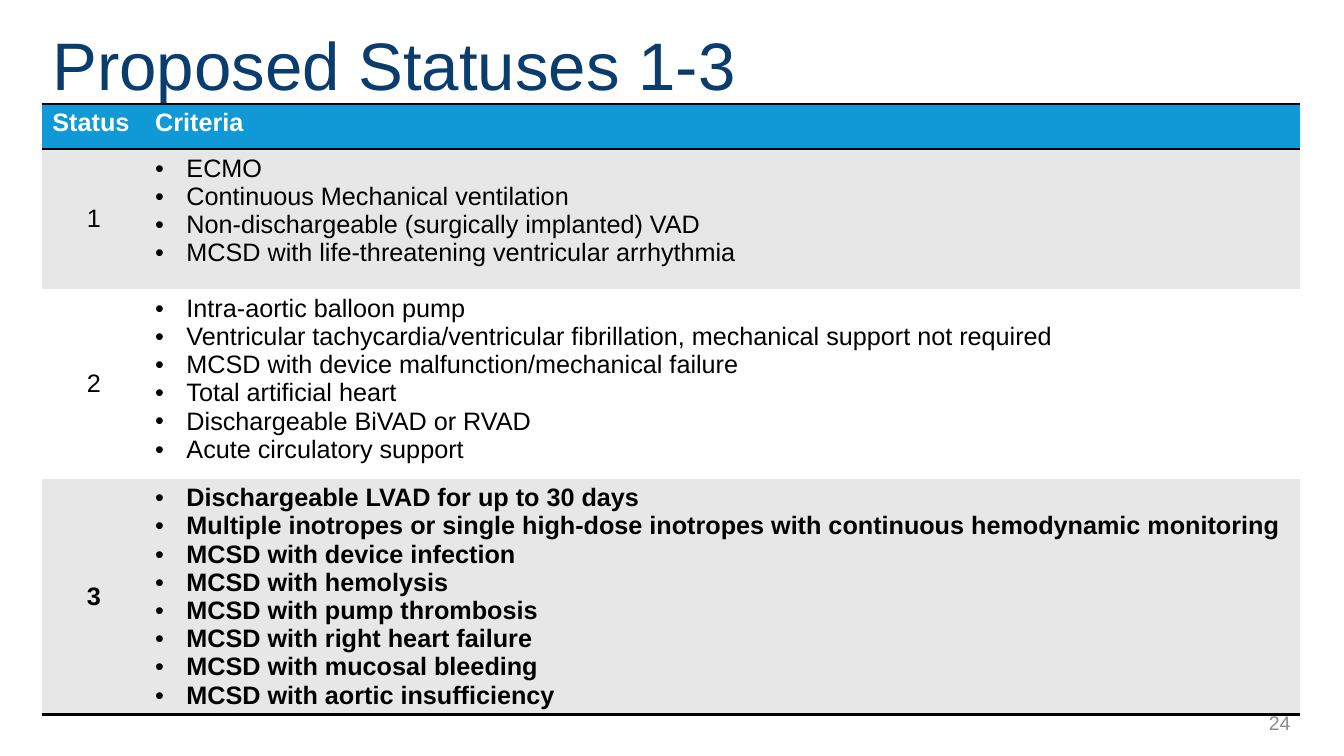
from dataclasses import dataclass

from lxml.etree import SubElement
from pptx import Presentation
from pptx.dml.color import RGBColor
from pptx.enum.text import MSO_ANCHOR, MSO_AUTO_SIZE, PP_ALIGN
from pptx.oxml.ns import qn
from pptx.slide import Slide
from pptx.table import Table, _Cell
from pptx.text.text import TextFrame, _Paragraph
from pptx.util import Inches, Pt


@dataclass(frozen=True)
class Theme:
    font: str = "Arial"
    title_size: int = 48
    table_size: int = 18
    number_size: int = 14
    navy: str = "0A3C6E"
    blue: str = "0F99D6"
    band: str = "E7E7E7"
    white: str = "FFFFFF"
    black: str = "000000"
    gray: str = "8C8C8C"
    rule_width: int = 2
    bullet_indent: float = 0.31


@dataclass(frozen=True)
class Status:
    label: str
    criteria: tuple[str, ...]
    height: float
    fill: str
    bold: bool = False


THEME = Theme()
NO_STYLE_NO_GRID = "{2D5ABB26-0587-4C30-8999-92F81FD0307C}"
COLUMN_WIDTHS = (1.02, 11.45)
HEADER_HEIGHT = 0.45

STATUSES = (
    Status("1", (
        "ECMO",
        "Continuous Mechanical ventilation",
        "Non-dischargeable (surgically implanted) VAD",
        "MCSD with life-threatening ventricular arrhythmia",
    ), 1.39, THEME.band),
    Status("2", (
        "Intra-aortic balloon pump",
        "Ventricular tachycardia/ventricular fibrillation, mechanical support not required",
        "MCSD with device malfunction/mechanical failure",
        "Total artificial heart",
        "Dischargeable BiVAD or RVAD",
        "Acute circulatory support",
    ), 1.88, THEME.white),
    Status("3", (
        "Dischargeable LVAD for up to 30 days",
        "Multiple inotropes or single high-dose inotropes with continuous hemodynamic monitoring",
        "MCSD with device infection",
        "MCSD with hemolysis",
        "MCSD with pump thrombosis",
        "MCSD with right heart failure",
        "MCSD with mucosal bleeding",
        "MCSD with aortic insufficiency",
    ), 2.33, THEME.band, bold=True),
)


def write(paragraph: _Paragraph, text: str, size: int, color: str,
          align: PP_ALIGN = PP_ALIGN.LEFT, bold: bool = False) -> None:
    paragraph.alignment = align
    run = paragraph.add_run()
    run.text = text
    font_format = {"name": THEME.font, "size": Pt(size), "bold": bold}
    for attribute, value in font_format.items():
        setattr(run.font, attribute, value)
    run.font.color.rgb = RGBColor.from_string(color)


def set_frame(frame: TextFrame) -> None:
    frame_format = {"word_wrap": True, "auto_size": MSO_AUTO_SIZE.NONE,
                    "vertical_anchor": MSO_ANCHOR.MIDDLE}
    for attribute, value in frame_format.items():
        setattr(frame, attribute, value)


def add_bullet(paragraph: _Paragraph) -> None:
    properties = paragraph._p.get_or_add_pPr()
    indent = Inches(THEME.bullet_indent)
    properties.set("marL", str(indent))
    properties.set("indent", str(-indent))
    SubElement(properties, qn("a:buFont"), typeface=THEME.font)
    SubElement(properties, qn("a:buChar"), char="•")


def fill_cell(cell: _Cell, color: str) -> None:
    cell.fill.solid()
    cell.fill.fore_color.rgb = RGBColor.from_string(color)


def add_rules(cell: _Cell, *sides: str) -> None:
    """Rules come before the fill in the cell properties."""
    properties = cell._tc.get_or_add_tcPr()
    for position, side in enumerate(sides):
        rule = SubElement(properties, qn(f"a:{side}"), w=str(Pt(THEME.rule_width)))
        solid = SubElement(rule, qn("a:solidFill"))
        SubElement(solid, qn("a:srgbClr"), val=THEME.black)
        properties.insert(position, rule)


def add_title(slide: Slide, text: str) -> None:
    title = slide.shapes.title
    place = {"left": 0.42, "top": 0.17, "width": 12.74, "height": 0.93}
    for attribute, value in place.items():
        setattr(title, attribute, Inches(value))
    set_frame(title.text_frame)
    write(title.text_frame.paragraphs[0], text, THEME.title_size, THEME.navy)


def add_slide_number(slide: Slide, number: str) -> None:
    box = slide.shapes.add_textbox(Inches(10.64), Inches(6.97), Inches(2.26), Inches(0.4))
    set_frame(box.text_frame)
    write(box.text_frame.paragraphs[0], number, THEME.number_size, THEME.gray, PP_ALIGN.RIGHT)


def fill_header(table: Table) -> None:
    table.rows[0].height = Inches(HEADER_HEIGHT)
    for cell, heading in zip(table.rows[0].cells, ("Status", "Criteria")):
        write(cell.text_frame.paragraphs[0], heading, THEME.table_size, THEME.white, bold=True)
        fill_cell(cell, THEME.blue)
        add_rules(cell, "lnT", "lnB")


def fill_status(table: Table, row: int, status: Status) -> None:
    table.rows[row].height = Inches(status.height)
    label, criteria = table.rows[row].cells
    label.vertical_anchor = MSO_ANCHOR.MIDDLE
    write(label.text_frame.paragraphs[0], status.label, THEME.table_size, THEME.black,
          PP_ALIGN.CENTER, status.bold)
    frame = criteria.text_frame
    for index, criterion in enumerate(status.criteria):
        paragraph = frame.add_paragraph() if index else frame.paragraphs[0]
        add_bullet(paragraph)
        write(paragraph, criterion, THEME.table_size, THEME.black, bold=status.bold)
    for cell in (label, criteria):
        fill_cell(cell, status.fill)


def add_status_table(slide: Slide) -> None:
    height = HEADER_HEIGHT + sum(status.height for status in STATUSES)
    frame = slide.shapes.add_table(len(STATUSES) + 1, len(COLUMN_WIDTHS), Inches(0.42),
                                   Inches(1.03), Inches(sum(COLUMN_WIDTHS)), Inches(height))
    table = frame.table
    table.horz_banding = False
    table._tbl.tblPr.find(qn("a:tableStyleId")).text = NO_STYLE_NO_GRID
    for column, width in zip(table.columns, COLUMN_WIDTHS):
        column.width = Inches(width)
    fill_header(table)
    for row, status in enumerate(STATUSES, start=1):
        fill_status(table, row, status)
    for cell in table.rows[len(STATUSES)].cells:
        add_rules(cell, "lnB")


def main() -> None:
    presentation = Presentation()
    presentation.slide_width = Inches(13.33)
    presentation.slide_height = Inches(7.5)
    slide = presentation.slides.add_slide(presentation.slide_layouts[5])

    # Title and page number
    add_title(slide, "Proposed Statuses 1-3")
    add_slide_number(slide, "24")

    # Criteria for each status
    add_status_table(slide)
    presentation.save("out.pptx")


if __name__ == "__main__":
    main()
